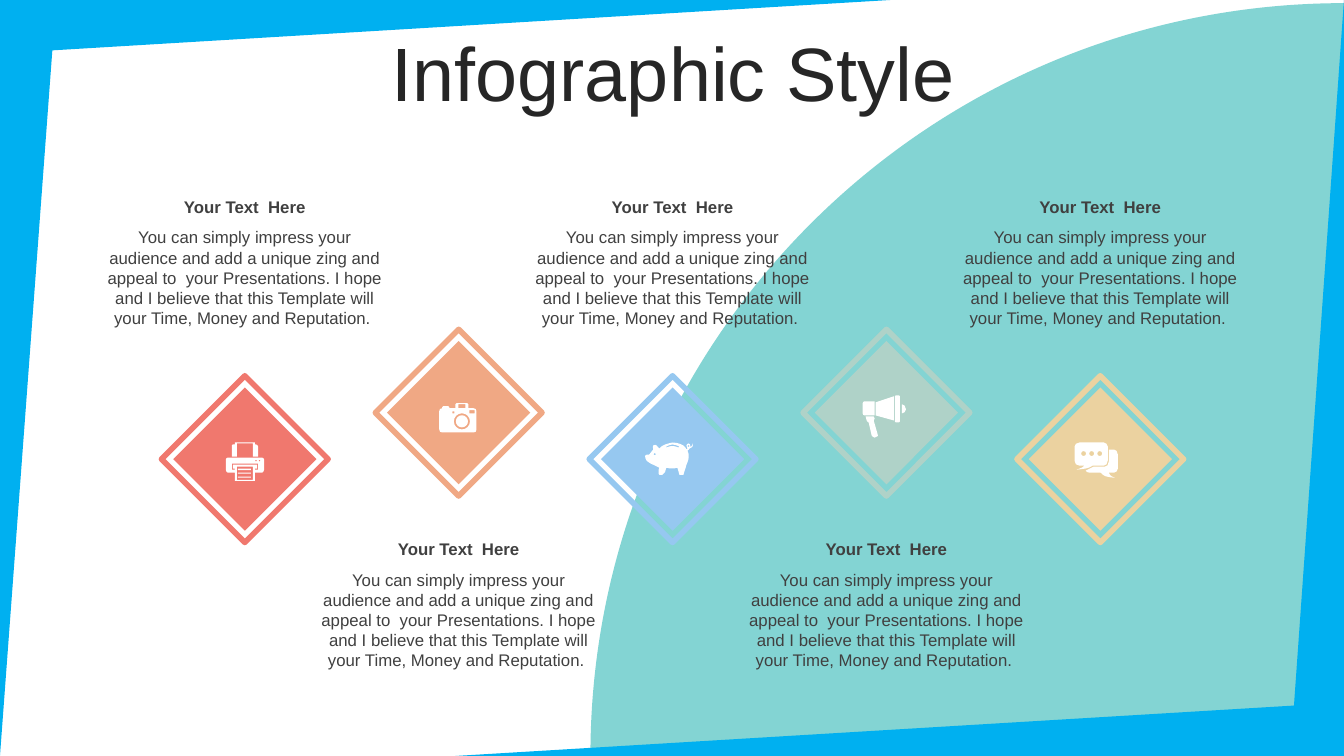
from lxml import etree
from pptx import Presentation
from pptx.dml.color import RGBColor
from pptx.enum.shapes import MSO_SHAPE
from pptx.enum.text import MSO_ANCHOR, PP_ALIGN
from pptx.oxml.ns import qn
from pptx.util import Cm, Pt

DIAMOND = MSO_SHAPE.DIAMOND
CENTER = PP_ALIGN.CENTER
TOP, MIDDLE = MSO_ANCHOR.TOP, MSO_ANCHOR.MIDDLE


def box(x, y, w, h):
    return [(x, y), (x + w, y), (x + w, y + h), (x, y + h)]


def dot(x, y, r):
    k = 0.55 * r
    return [(x, y - r), (x + k, y - r, x + r, y - k, x + r, y),
            (x + r, y + k, x + k, y + r, x, y + r),
            (x - k, y + r, x - r, y + k, x - r, y),
            (x - r, y - k, x - k, y - r, x, y - r)]


# Content
TITLE = "Infographic Style"
HEADING = "Your Text  Here"
BODY = ("You can simply impress your audience and add a unique zing and appeal to  "
        "your Presentations. I hope and I believe that this Template will your Time, "
        "Money and Reputation. ")

# Icon outlines: pairs are line ends, sextuples are Bezier curves
PRINTER = [
    box(12, 34, 13, 1), box(12, 30, 13, 1), box(12, 26, 13, 1.5), box(11, 24, 16, 13),
    [(6, 21), (6, 27), (9, 27), (9, 26), (7, 26), (7, 22), (31, 22), (31, 26),
     (29, 26), (29, 27), (32, 27), (32, 21)],
    dot(33.5, 18, 1), dot(30, 18, 1),
    [(2, 15), (36, 15), (37, 15, 38, 16, 38, 17), (38, 27), (38, 28, 37, 30, 36, 30),
     (29, 30), (29, 38), (9, 38), (9, 30), (2, 30), (1, 30, 0, 28, 0, 27), (0, 17),
     (0, 16, 1, 15, 2, 15)],
    [(9, 0), (29, 0), (29, 2), (30, 2), (31, 2, 32, 3, 32, 4), (32, 14), (27, 14),
     (27, 1), (11, 1), (11, 14), (6, 14), (6, 4), (6, 3, 6, 2, 7, 2), (9, 2)],
]
CAMERA = [
    dot(22.5, 18, 6), dot(22.5, 18, 8),
    box(13, 8, 2, 2), box(30, 7, 5, 3), box(19, 1, 7, 4),
    [(17, 0), (28, 0), (29, 0, 29, 0, 29, 1), (29, 5), (34, 5), (36, 5, 37, 6, 37, 8),
     (37, 26), (37, 28, 36, 29, 34, 29), (3, 29), (1, 29, 0, 28, 0, 26), (0, 8),
     (0, 6, 1, 5, 3, 5), (3, 4), (3, 3, 4, 3, 4, 3), (9, 3), (10, 3, 10, 3, 10, 4),
     (10, 5), (16, 5), (16, 1), (16, 0, 16, 0, 17, 0)],
]
PIG = [
    dot(9.5, 11.5, 1.2), dot(43, 3.5, 1.2),
    [(27, 2), (25, 2, 23, 3, 21, 4), (21, 5), (25, 3, 29, 3, 33, 5), (34, 4),
     (32, 3, 29, 2, 27, 2)],
    [(27, 0), (32, 0, 38, 2, 40, 5), (41, 7), (41, 6, 42, 6, 42, 6),
     (41, 5, 41, 5, 41, 3), (41, 2, 42, 1, 43, 1), (44, 1, 45, 2, 45, 4), (45, 5),
     (45, 4, 46, 5, 47, 1), (48, 4, 46, 6, 44, 6), (43, 7, 43, 8, 42, 8), (43, 11),
     (44, 15, 42, 20, 41, 22), (40, 26, 39, 28, 38, 32), (34, 32),
     (33, 30, 33, 27, 32, 25), (29, 26, 24, 26, 21, 25), (21, 28, 19, 31, 17, 32),
     (14, 32), (13, 32, 13, 27, 14, 25), (9, 22, -1, 20, 0, 13), (0, 12, 3, 12, 4, 12),
     (6, 10, 6, 9, 8, 7), (8, 6, 7, 3, 8, 3), (11, 1, 12, 4, 14, 6),
     (17, 2, 23, 1, 27, 0)],
]
MEGAPHONE = [
    [(11, 21), (12, 23), (12, 24, 12, 24, 11, 25), (15, 39), (16, 40, 15, 41, 14, 41),
     (12, 42), (11, 42, 10, 41, 9, 40), (6, 27), (5, 26, 4, 26, 4, 25), (3, 21)],
    [(39, 9), (41, 9, 43, 11, 43, 14), (43, 16, 41, 18, 39, 18)],
    [(2, 6), (12, 6), (12, 20), (2, 20), (1, 20, 0, 19, 0, 18), (0, 8),
     (0, 7, 1, 6, 2, 6)],
    [(31, 1), (31, 25), (13, 20), (13, 7)],
    [(33, 0), (36, 0), (37, 0, 37, 0, 37, 1), (37, 26), (37, 26, 37, 27, 36, 27),
     (33, 27), (33, 27, 32, 26, 32, 26), (32, 1), (32, 0, 33, 0, 33, 0)],
]
CHAT = [
    dot(9, 11, 2.5), dot(17, 11, 2.5), dot(25, 11, 2.5),
    [(34, 7), (39, 7), (41, 7, 43, 9, 43, 12), (43, 26), (43, 28, 41, 30, 39, 30),
     (34, 30), (35, 32, 35, 33, 40, 35), (31, 34, 30, 34, 26, 30), (15, 30),
     (13, 30, 12, 29, 11, 28), (14, 27, 16, 25, 19, 24), (30, 24),
     (32, 24, 34, 22, 34, 19)],
    [(5, 0), (29, 0), (31, 0, 33, 2, 33, 4), (33, 18), (33, 21, 31, 23, 29, 23),
     (18, 23), (13, 26, 11, 26, 2, 27), (7, 25, 8, 25, 10, 23), (5, 23),
     (2, 23, 0, 21, 0, 18), (0, 4), (0, 2, 2, 0, 5, 0)],
]
# Colour, icon, icon left and top in cm
STEPS = [
    ("F0786E", PRINTER, 5.69, 11.15),
    ("F0A884", CAMERA, 11.07, 10.16),
    ("96C8F0", PIG, 16.26, 11.15),
    ("AFD2C8", MEGAPHONE, 21.74, 9.96),
    ("EBD2A0", CHAT, 27.08, 11.15),
]

# Layout in cm
W, H = 33.87, 19.05
FIRST_X, STEP_X = 6.17, 5.39
TEXT_W = 7.66
ICON_UNIT = 2.54 / 100

prs = Presentation()
prs.slide_width, prs.slide_height = Cm(W), Cm(H)
s = prs.slides.add_slide(prs.slide_layouts[6])


def color(value):
    return RGBColor.from_string(value)


def add_text(text, x, y, w, h, size=12, bold=False, ink="404040", anchor=TOP, spacing=1.0):
    tf = s.shapes.add_textbox(Cm(x), Cm(y), Cm(w), Cm(h)).text_frame
    tf.word_wrap = True
    tf.vertical_anchor = anchor
    p = tf.paragraphs[0]
    p.alignment = CENTER
    p.line_spacing = spacing
    r = p.add_run()
    r.text = text
    r.font.name, r.font.size, r.font.bold = "Arial", Pt(size), bold
    r.font.color.rgb = color(ink)


def add_diamond(cx, cy, size, fill=None, line=None):
    sp = s.shapes.add_shape(DIAMOND, Cm(cx - size / 2), Cm(cy - size / 2), Cm(size), Cm(size))
    sp.shadow.inherit = False
    if fill:
        sp.fill.solid()
        sp.fill.fore_color.rgb = color(fill)
        sp.line.fill.background()
    else:
        sp.fill.background()
        sp.line.color.rgb = color(line)
        sp.line.width = Pt(4)


def add_outline(contours, fill, x=0, y=0, unit=1):
    def place(px, py):
        return Cm(x + px * unit), Cm(y + py * unit)

    builder = s.shapes.build_freeform(*place(*contours[0][0]))
    for n, contour in enumerate(contours):
        if n:
            builder.move_to(*place(*contour[0]))
        builder.add_line_segments([place(*item[-2:]) for item in contour[1:]], close=True)
    sp = builder.convert_to_shape()
    sp.shadow.inherit = False
    sp.fill.solid()
    sp.fill.fore_color.rgb = color(fill)
    sp.line.fill.background()

    # Bend the segments that have control points
    segments = [item for contour in contours for item in contour[1:]]
    for item, line in zip(segments, list(sp._element.iter(qn("a:lnTo")))):
        if len(item) == 6:
            curve = etree.Element(qn("a:cubicBezTo"))
            for k in (0, 2, 4):
                px, py = place(*item[k:k + 2])
                pt = etree.SubElement(curve, qn("a:pt"))
                pt.set("x", str(px - sp.left))
                pt.set("y", str(py - sp.top))
            line.getparent().replace(line, curve)
    return sp


# Translucent quarter disc
disc = add_outline([[(W, H), (14.88, H), (14.88, 8.56, 23.37, 0.08, W, 0.08)]], "13ADAB")
rgb = next(disc._element.spPr.iter(qn("a:srgbClr")))
etree.SubElement(rgb, qn("a:alpha")).set("val", "52000")

add_text(TITLE, 0.89, 0.94, 32.16, 2.01, size=54, ink="262626", anchor=MIDDLE, spacing=0.9)

# Steps: even ones are raised and have their text below
for i, (tint, icon, icon_x, icon_y) in enumerate(STEPS):
    raised = i % 2 == 1
    cx = FIRST_X + i * STEP_X
    cy = 10.4 if raised else 11.57
    text_y = 13.45 if raised else 4.83
    add_diamond(cx, cy, 3.61, fill=tint)
    add_diamond(cx, cy, 4.2, line=tint)
    add_text(BODY, cx - TEXT_W / 2, text_y + 0.77, TEXT_W, 2.82)
    add_text(HEADING, cx - TEXT_W / 2, text_y, TEXT_W, 0.77, bold=True)
    add_outline(icon, "FFFFFF", icon_x, icon_y, ICON_UNIT)

# Slanted frame: the lower right corner is the upper left one turned half round
corner = [(0, 0), (0, H), (1.32, 1.27), (22.45, 0)]
turned = [(min(W, 33.93 - x), H - y) for x, y in corner]
for wedge in (corner, turned):
    add_outline([wedge], "00B0F0")

prs.save("out.pptx")
